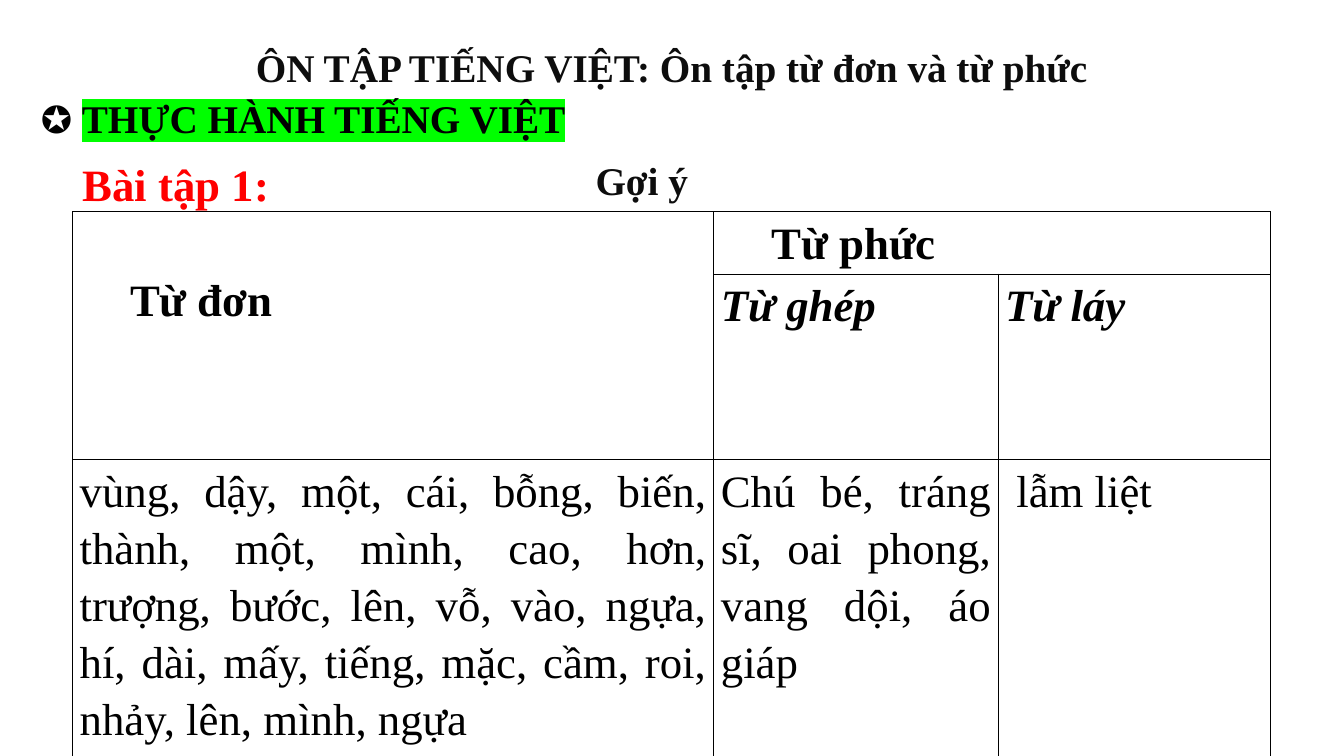
from dataclasses import dataclass

import lxml.etree
import pptx
import pptx.dml.color
import pptx.enum.text
import pptx.oxml.ns
import pptx.util

Inches = pptx.util.Inches
Align = pptx.enum.text.PP_ALIGN
FONT = "Times New Roman"
BLACK, INK, RED, GREEN = "000000", "0D0D0D", "FF0000", "00FF00"


@dataclass
class Heading:
    text: str
    left: float
    top: float
    width: float
    height: float
    size: int = 28
    color: str = INK
    align: Align = Align.CENTER
    wrap: bool = False
    bold: bool = True
    marked: str = ""


@dataclass
class Entry:
    row: int
    column: int
    text: str
    bold: bool = False
    italic: bool = False
    indent: float = 0
    top: float = 0


HEADINGS = [
    Heading("ÔN TẬP TIẾNG VIỆT: Ôn tập từ đơn và từ phức", 0.72, 0.31, 11.88, 0.64),
    Heading("✪ ", 0.31, 0.82, 5.49, 0.61, color=BLACK, align=Align.JUSTIFY,
            bold=False, marked="THỰC HÀNH TIẾNG VIỆT"),
    Heading("Bài tập 1:", 0.72, 1.43, 11.88, 0.67, 32, RED, Align.JUSTIFY, True),
    Heading("Gợi ý", 5.8, 1.43, 1.13, 0.6),
]

COLUMNS = [6.36, 2.82, 2.7]
ROWS = [0.62, 1.84, 3.0]
ENTRIES = [
    Entry(0, 0, "Từ đơn", bold=True, indent=0.5, top=0.57),
    Entry(0, 1, "Từ phức", bold=True, indent=0.5),
    Entry(1, 1, "Từ ghép", bold=True, italic=True),
    Entry(1, 2, "Từ láy", bold=True, italic=True),
    Entry(2, 0, "vùng, dậy, một, cái, bỗng, biến, thành, một, mình, cao, hơn, "
                "trượng, bước, lên, vỗ, vào, ngựa, hí, dài, mấy, tiếng, mặc, "
                "cầm, roi, nhảy, lên, mình, ngựa"),
    Entry(2, 1, "Chú bé, tráng sĩ, oai phong, vang dội, áo giáp"),
    Entry(2, 2, " lẫm liệt"),
]


def rgb(color: str) -> pptx.dml.color.RGBColor:
    return pptx.dml.color.RGBColor.from_string(color)


def add_child(parent, tag: str, **attributes: str):
    child = lxml.etree.SubElement(parent, pptx.oxml.ns.qn(tag))
    for name, value in attributes.items():
        child.set(name, value)
    return child


def style(para, size: int, color: str, align: Align, bold: bool, italic: bool = False) -> None:
    para.alignment = align
    para.line_spacing = 1.15
    font = para.font
    font.name, font.size = FONT, pptx.util.Pt(size)
    font.bold, font.italic = bold, italic
    font.color.rgb = rgb(color)


def draw_heading(page, heading: Heading) -> None:
    box = page.shapes.add_textbox(Inches(heading.left), Inches(heading.top),
                                  Inches(heading.width), Inches(heading.height))
    frame = box.text_frame
    frame.word_wrap = heading.wrap
    frame.auto_size = pptx.enum.text.MSO_AUTO_SIZE.SHAPE_TO_FIT_TEXT
    para = frame.paragraphs[0]
    para.add_run().text = heading.text
    style(para, heading.size, heading.color, heading.align, heading.bold)
    if heading.marked:
        span = para.add_run()
        span.text = heading.marked
        span.font.bold = True
        highlight = add_child(span.font._element, "a:highlight")
        add_child(highlight, "a:srgbClr", val=GREEN)


def draw_borders(cell) -> None:
    properties = cell._tc.get_or_add_tcPr()
    for side in ("a:lnL", "a:lnR", "a:lnT", "a:lnB"):
        line = add_child(properties, side, w=str(pptx.util.Pt(1)))
        fill = add_child(line, "a:solidFill")
        add_child(fill, "a:srgbClr", val=BLACK)


def fill_cell(cell, entry: Entry) -> None:
    cell.margin_top = Inches(entry.top)
    para = cell.text_frame.paragraphs[0]
    para.add_run().text = entry.text
    style(para, 32, BLACK, Align.JUSTIFY, entry.bold, entry.italic)
    if entry.indent:
        para._p.get_or_add_pPr().set("marL", str(Inches(entry.indent)))


def draw_word_table(page) -> None:
    table = page.shapes.add_table(len(ROWS), len(COLUMNS), Inches(0.72), Inches(2.1),
                                  Inches(sum(COLUMNS)), Inches(sum(ROWS))).table
    table.first_row = table.horz_banding = False
    for column, width in zip(table.columns, COLUMNS):
        column.width = Inches(width)
    for row, height in zip(table.rows, ROWS):
        row.height = Inches(height)
    for cell in table.iter_cells():
        cell.margin_left = cell.margin_right = Inches(0.07)
        cell.margin_top = cell.margin_bottom = 0
        draw_borders(cell)
        cell.fill.background()
    table.cell(0, 0).merge(table.cell(1, 0))
    table.cell(0, 1).merge(table.cell(0, 2))
    for entry in ENTRIES:
        fill_cell(table.cell(entry.row, entry.column), entry)


def main() -> None:
    deck = pptx.Presentation()
    deck.slide_width, deck.slide_height = Inches(13.33), Inches(7.5)
    page = deck.slides.add_slide(deck.slide_layouts[6])
    for heading in HEADINGS:
        draw_heading(page, heading)
    draw_word_table(page)
    deck.save("out.pptx")


if __name__ == "__main__":
    main()
